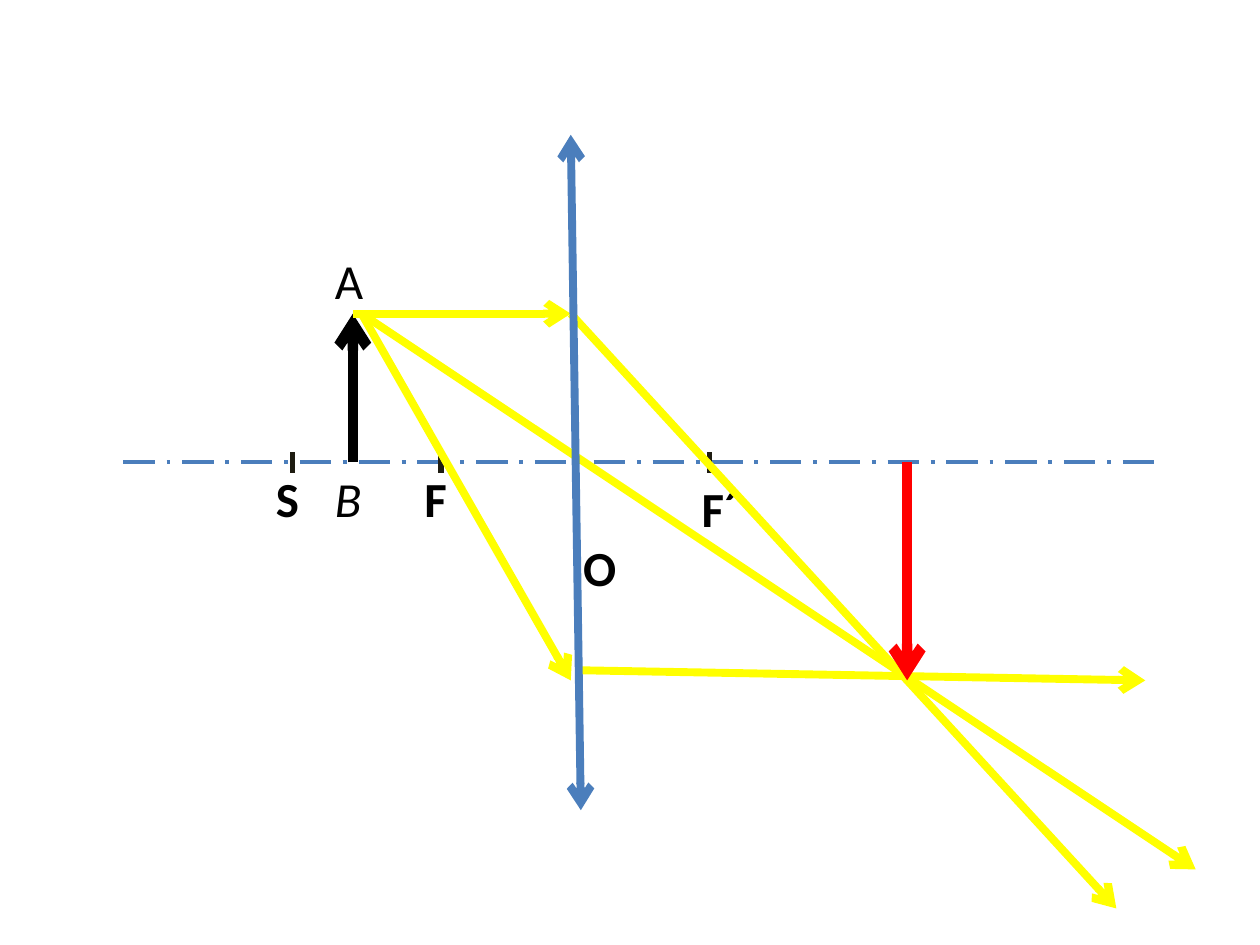
from lxml.etree import SubElement
from pptx import Presentation
from pptx.dml.color import RGBColor
from pptx.enum.dml import MSO_LINE
from pptx.enum.shapes import MSO_CONNECTOR
from pptx.enum.text import MSO_AUTO_SIZE
from pptx.oxml.ns import qn
from pptx.util import Inches, Pt

BLUE = RGBColor(0x4B, 0x7E, 0xBC)
DARK = RGBColor(0x1E, 0x1C, 0x11)
BLACK = RGBColor(0, 0, 0)
YELLOW = RGBColor(0xFF, 0xFF, 0)
RED = RGBColor(0xFF, 0, 0)


def add_line(s, box, start, end, color, width, heads=(), dash=None):
    """Draw a line between two points given relative to the box."""
    left, top = box
    line = s.shapes.add_connector(
        MSO_CONNECTOR.STRAIGHT,
        Inches(left + start[0]), Inches(top + start[1]),
        Inches(left + end[0]), Inches(top + end[1]))
    line.line.color.rgb = color
    line.line.width = Pt(width)
    if dash:
        line.line.dash_style = dash
    spPr = line._element.spPr
    for head in heads:
        SubElement(spPr.find(qn("a:ln")), qn(f"a:{head}"), type="arrow")
    SubElement(spPr, qn("a:effectLst"))


def add_label(s, box, text, x, y, width, bold=True, italic=False, wrap=False):
    """Place a point label relative to the box."""
    left, top = box
    tb = s.shapes.add_textbox(Inches(left + x), Inches(top + y),
                              Inches(width), Inches(0.57))
    tf = tb.text_frame
    tf.word_wrap = wrap
    tf.auto_size = MSO_AUTO_SIZE.SHAPE_TO_FIT_TEXT
    p = tf.paragraphs[0]
    p.text = text
    font = p.font
    font.name, font.size = "Calibri", Pt(28)
    font.bold, font.italic = bold, italic
    font.color.rgb = BLACK


def add_axis(s, box, axis_y):
    """Draw the optical axis with its ticks and the point labels."""
    add_line(s, box, (0, axis_y), (8.19, axis_y), BLUE, 2.25,
             dash=MSO_LINE.LONG_DASH_DOT)
    for x in (1.34, 2.52, 4.65):
        add_line(s, box, (x, axis_y - 0.08), (x, axis_y + 0.08), DARK, 3)
    add_label(s, box, "S", 1.11, axis_y, 0.39)
    add_label(s, box, "B", 1.58, axis_y, 0.42, bold=False, italic=True, wrap=True)
    add_label(s, box, "F", 2.29, axis_y, 0.38)
    add_label(s, box, "F´", 4.49, axis_y + 0.08, 0.5)
    add_label(s, box, "O", 3.55, axis_y + 0.55, 0.47, wrap=True)
    add_label(s, box, "A", 1.58, axis_y - 1.73, 0.46, bold=False)


def add_lens_and_rays(s, box, axis_y):
    """Draw the object, the lens, the rays and the inverted image."""
    object_x, object_y = 1.82, 1.42
    image_x, image_y = 6.22, 4.33
    lens_x, lens_bottom_x = 3.55, 3.63
    source = (object_x + 0.07, object_y)
    on_lens = (lens_x, object_y)
    end, both = ("tailEnd",), ("headEnd", "tailEnd")
    arrows = [
        ((object_x, axis_y), (object_x, object_y), BLACK, 6, end),
        ((object_x, object_y), on_lens, YELLOW, 4.5, end),
        (on_lens, (7.88, 6.14), YELLOW, 4.5, end),
        (source, (8.51, 5.83), YELLOW, 4.5, end),
        ((lens_bottom_x, 4.25), (8.11, image_y), YELLOW, 4.5, end),
        ((lens_x, 0), (lens_bottom_x, 5.36), BLUE, 4.5, both),
        (source, (lens_x, image_y), YELLOW, 4.5, end),
        ((image_x, axis_y), (image_x, image_y), RED, 6, end),
    ]
    for arrow in arrows:
        add_line(s, box, *arrow)


def main():
    """Build the converging lens slide."""
    prs = Presentation()
    prs.slide_width, prs.slide_height = Inches(10), Inches(7.5)
    s = prs.slides.add_slide(prs.slide_layouts[6])
    box, axis_y = (0.98, 1.07), 2.6
    add_axis(s, box, axis_y)
    add_lens_and_rays(s, box, axis_y)
    prs.save("out.pptx")


if __name__ == "__main__":
    main()
